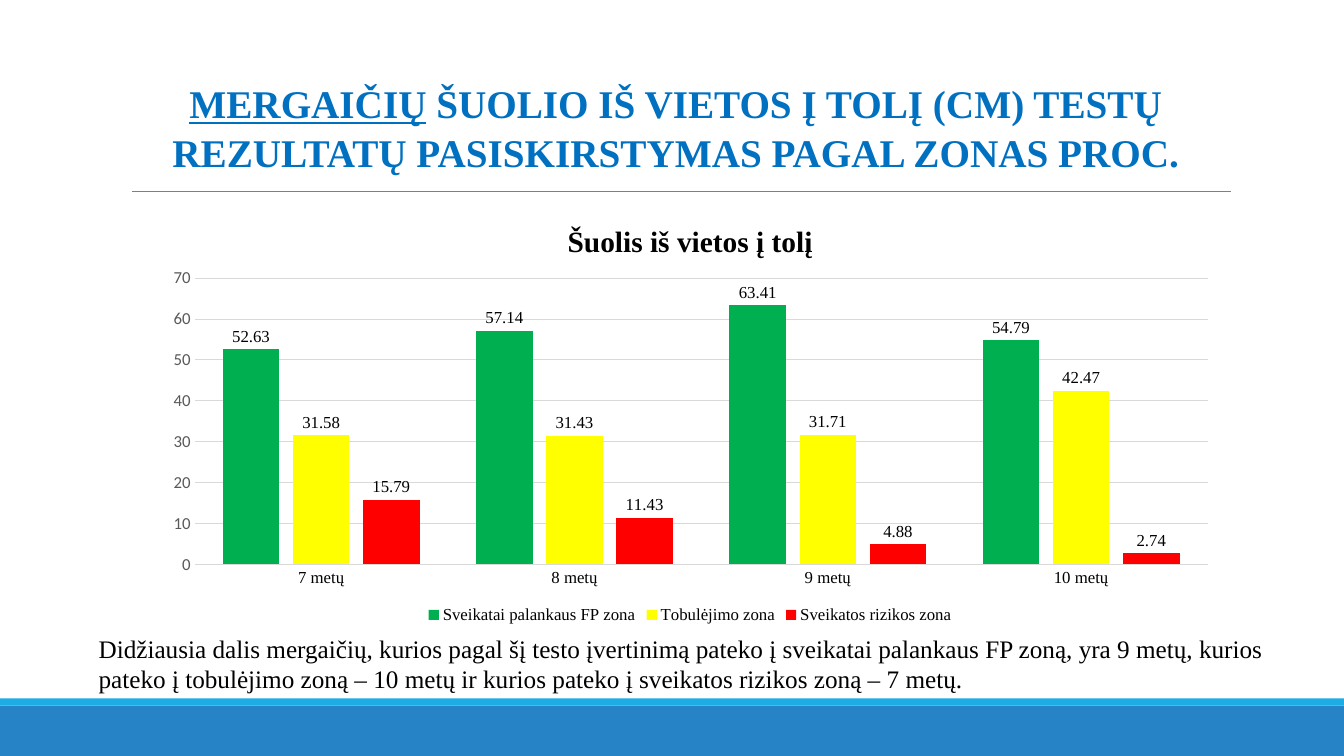
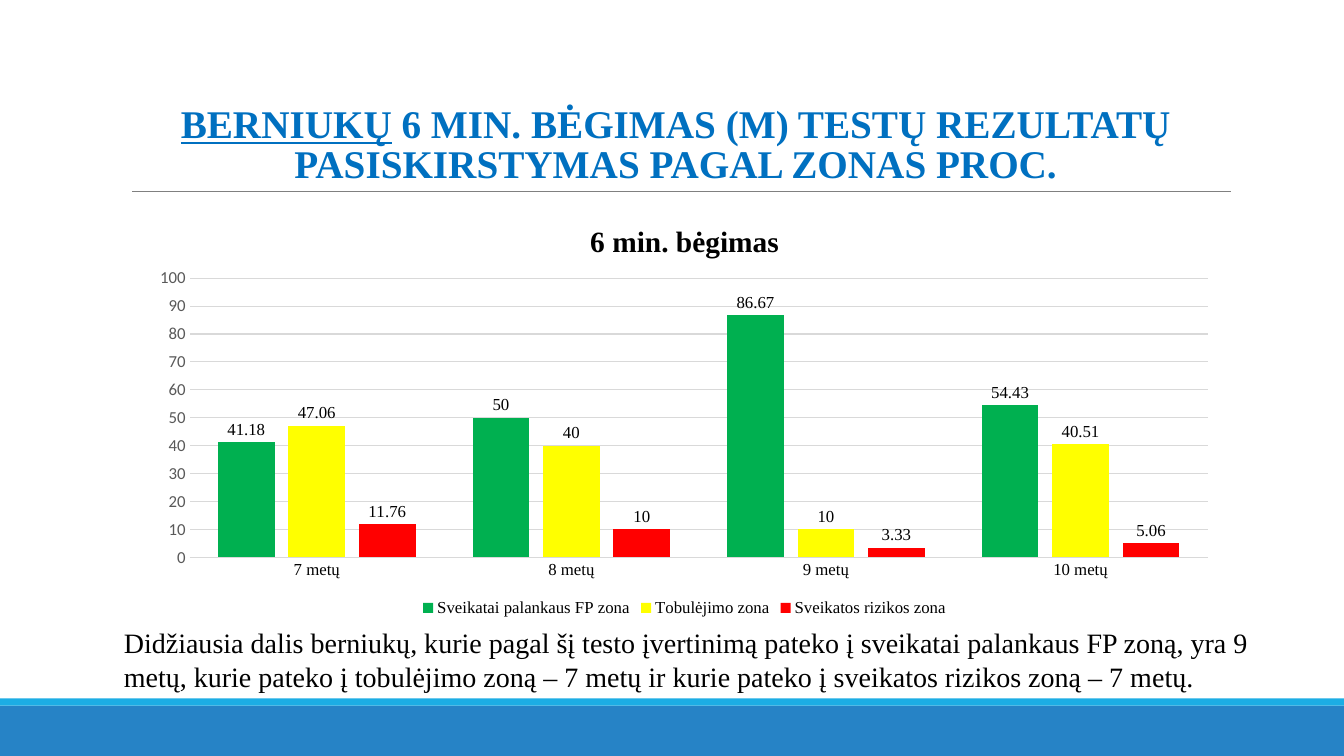
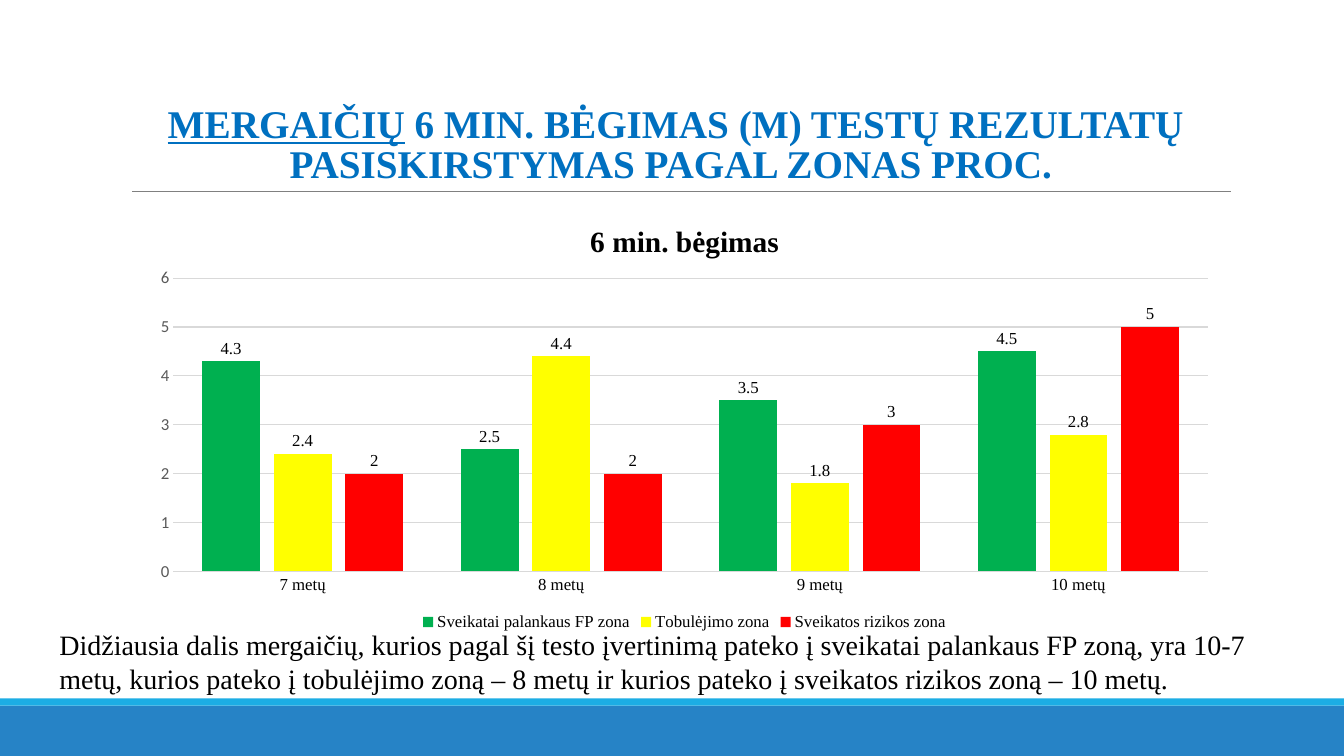
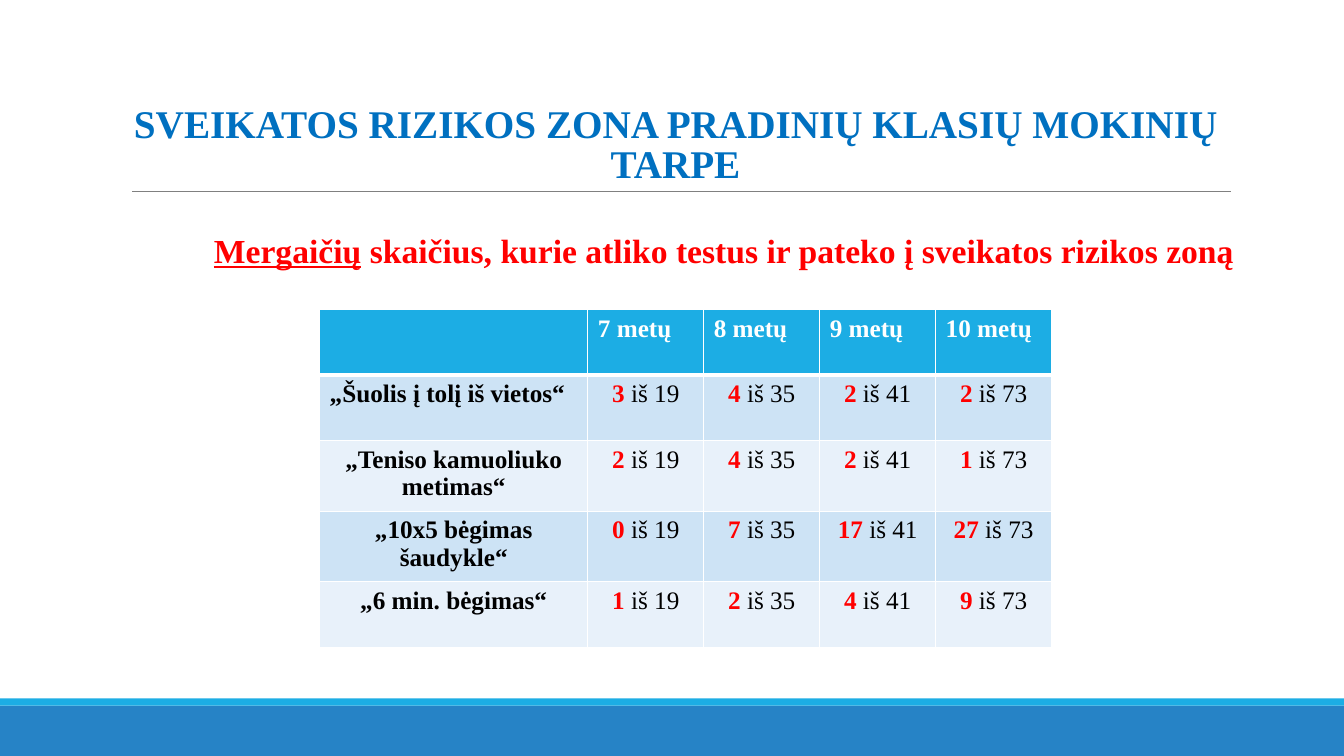
"""Builds four slides on pupils' fitness test results by health zone."""
import lxml.etree
import pptx
import pptx.chart.data
import pptx.dml.color
import pptx.enum.chart
import pptx.enum.shapes
import pptx.enum.text
import pptx.oxml.ns
import pptx.util

Inches = pptx.util.Inches
Pt = pptx.util.Pt
qn = pptx.oxml.ns.qn
CHART = pptx.enum.chart
MID = pptx.enum.text.PP_ALIGN.CENTER
SERIF = "Times New Roman"
COLORS = {
    "band": "2683C6", "strip": "1CADE4", "rule": "808080", "title": "0070C0",
    "good": "00B050", "fair": "FFFF00", "risk": "FF0000", "grid": "D9D9D9",
    "tick": "595959", "text": "000000", "white": "FFFFFF",
    "odd": "CDE3F5", "even": "E8F1FA",
}
AGES = ["7 metų", "8 metų", "9 metų", "10 metų"]
ZONES = {"good": "Sveikatai palankaus FP zona", "fair": "Tobulėjimo zona",
         "risk": "Sveikatos rizikos zona"}


def shade(key):
    return pptx.dml.color.RGBColor.from_string(COLORS[key])


def node(parent, tag, **attrs):
    return lxml.etree.SubElement(parent, qn(tag), attrs)


class Deck:
    def __init__(self):
        self.prs = pptx.Presentation()
        self.prs.slide_width, self.prs.slide_height = Inches(13.33), Inches(7.5)
        self.slide = None

    def style(self, font, size, color="text", **more):
        values = {"name": SERIF, "size": Pt(size), "bold": False, **more}
        for key, value in values.items():
            setattr(font, key, value)
        font.color.rgb = shade(color)

    def start(self):
        self.slide = self.prs.slides.add_slide(self.prs.slide_layouts[6])
        self.band(7, 0.5, "band")
        self.band(6.93, 0.07, "strip")
        self.rule(1.31, 12.21, 1.9)

    def band(self, top, height, color):
        shape = self.slide.shapes.add_shape(
            pptx.enum.shapes.MSO_SHAPE.RECTANGLE,
            Inches(0), Inches(top), Inches(13.33), Inches(height))
        shape.shadow.inherit = False
        shape.fill.solid()
        shape.fill.fore_color.rgb = shade(color)
        shape.line.fill.background()

    def rule(self, left, right, top):
        line = self.slide.shapes.add_connector(
            pptx.enum.shapes.MSO_CONNECTOR.STRAIGHT,
            Inches(left), Inches(top), Inches(right), Inches(top))
        line.line.color.rgb = shade("rule")
        line.line.width = Pt(0.5)
        node(line.element.spPr, "a:effectLst")

    def runs(self, para, parts):
        for text, size, color, more in parts:
            run = para.add_run()
            run.text = text
            self.style(run.font, size, color, **more)

    def text(self, box, parts, **form):
        frame = self.slide.shapes.add_textbox(*map(Inches, box)).text_frame
        frame.word_wrap = True
        para = frame.paragraphs[0]
        for key, value in form.items():
            setattr(para, key, value)
        self.runs(para, parts)
        return frame

    def title(self, lead, rest, top=0.31, space=0.85):
        frame = self.text((1.2, top, 11, 1.59), [
            (lead, 28, "title", {"bold": True, "underline": True}),
            (rest, 28, "title", {"bold": True})][not lead:],
            alignment=MID, line_spacing=space)
        frame.vertical_anchor = pptx.enum.text.MSO_ANCHOR.BOTTOM

    def chart(self, name, box, inner, rows, top, unit):
        data = pptx.chart.data.CategoryChartData()
        data.categories = AGES
        for zone, row in zip(ZONES.values(), rows):
            data.add_series(zone, row)
        chart = self.slide.shapes.add_chart(
            CHART.XL_CHART_TYPE.COLUMN_CLUSTERED, *map(Inches, box), data).chart
        self.style(chart.font, 10, name="Calibri")
        chart.has_title = True
        para = chart.chart_title.text_frame.paragraphs[0]
        self.runs(para, [(name, 21, "text", {"bold": True})])
        chart.has_legend = True
        chart.legend.position = CHART.XL_LEGEND_POSITION.BOTTOM
        chart.legend.include_in_layout = False
        self.style(chart.legend.font, 12)
        self.axes(chart, top, unit)
        self.bars(chart.plots[0])
        self.fit(chart, box, inner)

    def axes(self, chart, top, unit):
        cat, val = chart.category_axis, chart.value_axis
        for axis in (cat, val):
            axis.major_tick_mark = axis.minor_tick_mark = CHART.XL_TICK_MARK.NONE
        self.style(cat.tick_labels.font, 12)
        self.style(val.tick_labels.font, 12, "tick", name="Calibri")
        val.minimum_scale, val.maximum_scale, val.major_unit = 0, top, unit
        val.format.line.fill.background()
        for line, width in ((cat.format.line, 1),
                            (val.major_gridlines.format.line, 0.75)):
            line.color.rgb = shade("grid")
            line.width = Pt(width)

    def bars(self, plot):
        plot.gap_width, plot.overlap = 100, -24
        plot.vary_by_categories = False
        plot.has_data_labels = True
        plot.data_labels.show_value = True
        plot.data_labels.position = CHART.XL_LABEL_POSITION.OUTSIDE_END
        self.style(plot.data_labels.font, 12)
        for key, series in zip(ZONES, plot.series):
            series.format.fill.solid()
            series.format.fill.fore_color.rgb = shade(key)

    def fit(self, chart, box, inner):
        area = chart.element.find(".//" + qn("c:plotArea"))
        for old in area.findall(qn("c:layout")):
            area.remove(old)
        layout = node(area, "c:layout")
        area.insert(0, layout)
        manual = node(layout, "c:manualLayout")
        left, top, width, height = box
        x, y, w, h = inner
        node(manual, "c:layoutTarget", val="inner")
        for tag in ("c:xMode", "c:yMode"):
            node(manual, tag, val="edge")
        for tag, part in (("c:x", (x - left) / width), ("c:y", (y - top) / height),
                          ("c:w", w / width), ("c:h", h / height)):
            node(manual, tag, val=f"{part:.4f}")

    def cell(self, cell, fill, parts, align, under=1):
        cell.fill.solid()
        cell.fill.fore_color.rgb = shade(fill)
        para = cell.text_frame.paragraphs[0]
        para.alignment = align
        self.runs(para, parts)
        props = cell._tc.get_or_add_tcPr()
        sides = (("a:lnL", 1), ("a:lnR", 1), ("a:lnT", 1), ("a:lnB", under))
        for spot, (tag, width) in enumerate(sides):
            line = node(props, tag, w=str(Pt(width)))
            node(node(line, "a:solidFill"), "a:srgbClr", val=COLORS["white"])
            props.insert(spot, line)

    def table(self, left, top, widths, height, rows, totals):
        grid = self.slide.shapes.add_table(
            len(rows) + 1, len(widths), Inches(left), Inches(top),
            Inches(sum(widths)), Inches(height * (len(rows) + 1))).table
        for col, width in zip(grid.columns, widths):
            col.width = Inches(width)
        bold = {"bold": True}
        for c, head in enumerate([""] + AGES):
            parts = [(head, 18, "white", bold)] if head else []
            self.cell(grid.cell(0, c), "strip", parts, None, 3)
        for r, (name, counts) in enumerate(rows, 1):
            fill = "odd" if r % 2 else "even"
            self.cell(grid.cell(r, 0), fill, [(name, 18, "text", bold)],
                      None if r == 1 else MID)
            for c, (count, total) in enumerate(zip(counts, totals), 1):
                self.cell(grid.cell(r, c), fill, [
                    (str(count), 18, "risk", bold),
                    (f" iš {total}", 18, "text", {})], MID)


CHARTS = [
    {"title": ("MERGAIČIŲ", " ŠUOLIO IŠ VIETOS Į TOLĮ (CM) TESTŲ REZULTATŲ "
               "PASISKIRSTYMAS PAGAL ZONAS PROC.", 0.2, 1.04),
     "chart": ("Šuolis iš vietos į tolį", (1.5, 2.02, 10.69, 4.21),
               (1.93, 2.76, 10.05, 2.84),
               [(52.63, 57.14, 63.41, 54.79), (31.58, 31.43, 31.71, 42.47),
                (15.79, 11.43, 4.88, 2.74)], 70, 10),
     "box": (0.88, 6.23, 11.89, 0.71), "size": 18,
     "note": "Didžiausia dalis mergaičių, kurios pagal šį testo įvertinimą pateko "
             "į sveikatai palankaus FP zoną, yra 9 metų, kurios pateko į tobulėjimo "
             "zoną – 10 metų ir kurios pateko į sveikatos rizikos zoną – 7 metų."},
    {"title": ("BERNIUKŲ", " 6 MIN. BĖGIMAS (M) TESTŲ REZULTATŲ "
               "PASISKIRSTYMAS PAGAL ZONAS PROC."),
     "chart": ("6 min. bėgimas", (1.38, 2.02, 10.82, 4.14),
               (1.88, 2.76, 10.1, 2.77),
               [(41.18, 50, 86.67, 54.43), (47.06, 40, 10, 40.51),
                (11.76, 10, 3.33, 5.06)], 100, 10),
     "box": (1.13, 6.16, 11.54, 0.77), "size": 20,
     "note": "Didžiausia dalis berniukų, kurie pagal šį testo įvertinimą pateko "
             "į sveikatai palankaus FP zoną, yra 9 metų, kurie pateko į tobulėjimo "
             "zoną – 7 metų ir kurie pateko į sveikatos rizikos zoną – 7 metų."},
    {"title": ("MERGAIČIŲ", " 6 MIN. BĖGIMAS (M) TESTŲ REZULTATŲ "
               "PASISKIRSTYMAS PAGAL ZONAS PROC. "),
     "chart": ("6 min. bėgimas", (1.38, 2.02, 10.82, 4.28),
               (1.72, 2.76, 10.26, 2.91),
               [(4.3, 2.5, 3.5, 4.5), (2.4, 4.4, 1.8, 2.8), (2, 2, 3, 5)], 6, 1),
     "box": (0.49, 6.18, 12.36, 0.77), "size": 20,
     "note": "Didžiausia dalis mergaičių, kurios pagal šį testo įvertinimą pateko "
             "į sveikatai palankaus FP zoną, yra 10-7 metų, kurios pateko į tobulėjimo "
             "zoną – 8 metų ir kurios pateko į sveikatos rizikos zoną – 10 metų."},
]
TESTS = [
    ("„Šuolis į tolį iš vietos“", (3, 4, 2, 2)),
    ("„Teniso kamuoliuko metimas“", (2, 4, 2, 1)),
    ("„10x5 bėgimas šaudykle“", (0, 7, 17, 27)),
    ("„6 min. bėgimas“", (1, 2, 4, 9)),
]


def main():
    deck = Deck()
    for page in CHARTS:
        deck.start()
        deck.title(*page["title"])
        deck.chart(*page["chart"])
        deck.text(page["box"], [(page["note"], page["size"], "text", {})])
    deck.start()
    deck.title("", "SVEIKATOS RIZIKOS ZONA PRADINIŲ KLASIŲ MOKINIŲ TARPE")
    deck.table(3.17, 3.07, [2.66] + [1.15] * 4, 0.65, TESTS, (19, 35, 41, 73))
    deck.text((1.2, 2.23, 11.96, 0.5), [
        ("Mergaičių", 24, "risk", {"bold": True, "underline": True}),
        (" skaičius, kurie atliko testus ir pateko į sveikatos rizikos zoną",
         24, "risk", {"bold": True})], alignment=MID)
    deck.prs.save("out.pptx")


if __name__ == "__main__":
    main()
